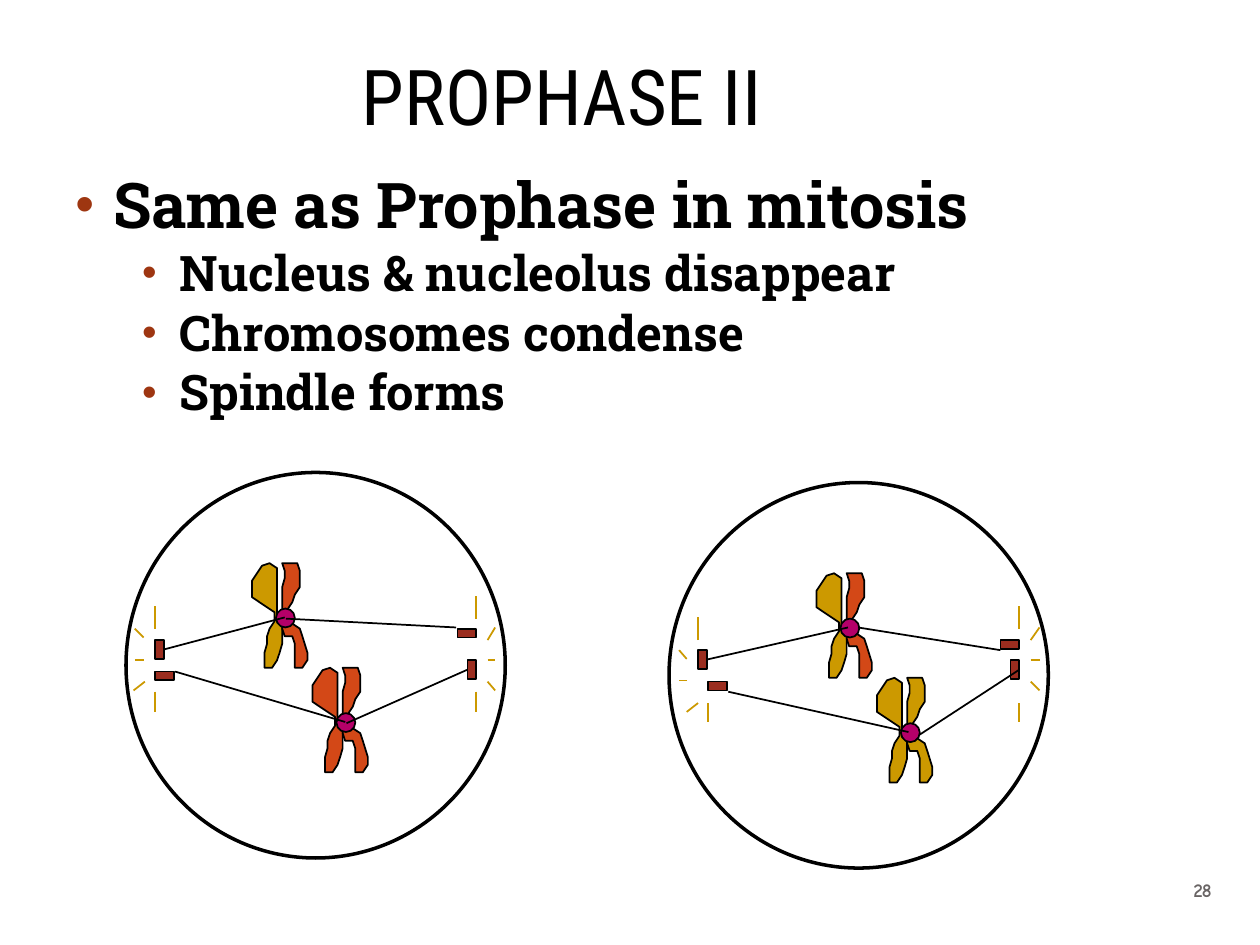
from lxml import etree
from pptx import Presentation
from pptx.dml.color import RGBColor
from pptx.enum import shapes, text
from pptx.oxml import ns
from pptx.util import Inches, Pt

COLORS = {"ink": "000000", "bullet": "9E3611", "number": "696464", "orange": "D34817",
          "gold": "CC9900", "centromere": "B50069", "rod": "9B2D1F"}
COLUMNS, ROWS = 1000, 750  # grid units of a hundredth of an inch
UNIT = Inches(10) // COLUMNS

# Chromosome outlines, in grid units from its top left corner
LEFT_CHROMATID = [
    (26, 44), (20, 42), (20, 4), (14, 0), (8, 2), (0, 14), (0, 27), (18, 39), (18, 46),
    (14, 52), (12, 58), (12, 64), (10, 71), (10, 83), (16, 83), (20, 77), (22, 71),
    (24, 64), (24, 46)]
RIGHT_CHROMATID = [
    (26, 44), (24, 37), (24, 19), (26, 12), (26, 6), (24, 0), (36, 0), (38, 6), (38, 19),
    (34, 25), (32, 31), (28, 37), (26, 44), (38, 52), (40, 58), (44, 71), (44, 77),
    (40, 83), (34, 83), (34, 64), (32, 58), (26, 58), (24, 52), (24, 46)]

# Cells: all parts are in grid units from the top left of the cell's box.
# A fibre ends at a point or at a (pole, connection site) of an upright rod.
CELLS = [
    {"box": (100, 375, 301, 306),
     "chromosomes": [(148, 155, "orange", "orange"), (100, 72, "gold", "orange")],
     "upright": {"left": (23, 133), "right": (271, 149)},
     "flat": [(23, 158), (263, 124)],
     "rays": [((15, 166), (6, 173)), ((7, 149), (14, 149)), ((7, 124), (14, 131)),
              ((23, 124), (23, 106)), ((23, 174), (23, 190)),
              ((278, 116), (278, 98)), ((287, 133), (293, 123)), ((287, 149), (293, 149)),
              ((287, 166), (293, 173)), ((278, 174), (278, 190))],
     "fibres": [(("left", 3), (126, 115)), ((127, 116), (262, 123)),
                ((39, 158), (174, 198)), ((175, 199), ("right", 1))]},
    {"box": (531, 383, 301, 306),
     "chromosomes": [(117, 72, "gold", "orange"), (165, 155, "gold", "gold")],
     "upright": {"left": (23, 133), "right": (271, 141)},
     "flat": [(31, 158), (263, 125)],
     "rays": [((23, 175), (14, 182)), ((8, 157), (14, 157)), ((8, 133), (14, 140)),
              ((23, 125), (23, 107)), ((31, 175), (31, 190)),
              ((278, 116), (278, 98)), ((287, 125), (294, 115)), ((287, 141), (294, 141)),
              ((287, 158), (294, 165)), ((278, 175), (278, 190))],
     "fibres": [(("left", 3), (142, 115)), ((263, 133), (150, 115)),
                ((47, 166), (190, 198)), ((199, 200), ("right", 3))]},
]


def rgb(name):
    return RGBColor.from_string(COLORS[name])


def grid(*units):
    return [unit * UNIT for unit in units]


def paint(shape, fill=None, width=1):
    shape.shadow.inherit = False
    if fill:
        shape.fill.solid()
        shape.fill.fore_color.rgb = rgb(fill)
    else:
        shape.fill.background()
    shape.line.color.rgb = rgb("ink")
    shape.line.width = Pt(width)


def add_preset(slide, kind, box, fill=None, width=1):
    shape = slide.shapes.add_shape(kind, *grid(*box))
    paint(shape, fill, width)
    return shape


def add_line(slide, start, end, color):
    line = slide.shapes.add_connector(shapes.MSO_CONNECTOR.STRAIGHT, *grid(*start, *end))
    line.line.color.rgb = rgb(color)
    line.line.width = Pt(1)
    etree.SubElement(line._element.spPr, ns.qn("a:effectLst"))
    return line


def add_text(slide, box, lines, anchor=text.MSO_ANCHOR.TOP):
    frame = slide.shapes.add_textbox(*grid(*box)).text_frame
    frame.word_wrap = True
    frame.vertical_anchor = anchor
    frame.text = "\n".join(lines)
    return frame


def style(paragraph, font, size, color="ink", bold=False):
    for run in paragraph.runs:
        run.font.name, run.font.size, run.font.bold = font, Pt(size), bold
        run.font.color.rgb = rgb(color)


def add_bullet(paragraph, margin):
    props = paragraph._p.get_or_add_pPr()
    props.set("marL", str(Inches(margin)))
    props.set("indent", str(Inches(-0.3)))
    color = etree.SubElement(props, ns.qn("a:buClr"))
    etree.SubElement(color, ns.qn("a:srgbClr"), val=COLORS["bullet"])
    etree.SubElement(props, ns.qn("a:buSzPct"), val="85000")
    etree.SubElement(props, ns.qn("a:buFont"), typeface="Arial")
    etree.SubElement(props, ns.qn("a:buChar"), char="•")


def add_title(slide, box):
    title = add_text(slide, box, ["PROPHASE II"], text.MSO_ANCHOR.MIDDLE).paragraphs[0]
    title.alignment = text.PP_ALIGN.CENTER
    title.line_spacing = 0.9
    style(title, "Roboto Condensed", 44)


def add_points(slide, box):
    frame = add_text(slide, box, ["Same as Prophase in mitosis", "Nucleus & nucleolus disappear",
                                  "Chromosomes condense", "Spindle forms"])
    for index, point in enumerate(frame.paragraphs):
        point.level = 1 if index else 0
        add_bullet(point, 0.83 if index else 0.3)
        point.line_spacing = 0.9
        point.space_before = Pt(4 if index else 0)
        style(point, "Roboto Slab", 28 if index else 36, bold=True)


def add_slide_number(slide, box):
    number = add_text(slide, box, ["28"], text.MSO_ANCHOR.MIDDLE).paragraphs[0]
    number.alignment = text.PP_ALIGN.CENTER
    style(number, "Comic Neue", 11, "number", bold=True)
    number.runs[0].font._element.set("spc", "-70")


def add_chromosome(slide, left, top, left_fill, right_fill):
    for outline, fill in ((LEFT_CHROMATID, left_fill), (RIGHT_CHROMATID, right_fill)):
        points = [(left + x, top + y) for x, y in outline]
        builder = slide.shapes.build_freeform(*points[0], scale=UNIT)
        builder.add_line_segments(points[1:], close=True)
        paint(builder.convert_to_shape(), fill)
    add_preset(slide, shapes.MSO_SHAPE.OVAL, (left + 19, top + 36, 15, 15), "centromere")


def add_cell(slide, cell):
    left, top, width, height = cell["box"]

    def place(point):
        return left + point[0], top + point[1]

    # Chromosomes and membrane
    for x, y, *fills in cell["chromosomes"]:
        add_chromosome(slide, *place((x, y)), *fills)
    add_preset(slide, shapes.MSO_SHAPE.OVAL, (left, top, width, height), width=2)

    # Centrioles with their asters
    rod_kind = shapes.MSO_SHAPE.RECTANGLE
    uprights = {pole: add_preset(slide, rod_kind, (*place(spot), 7, 15), "rod")
                for pole, spot in cell["upright"].items()}
    for spot in cell["flat"]:
        add_preset(slide, rod_kind, (*place(spot), 15, 7), "rod")
    for start, end in cell["rays"]:
        add_line(slide, place(start), place(end), "gold")

    # Spindle fibres
    for ends in cell["fibres"]:
        points = [place(cell["upright"].get(end[0], end)) for end in ends]
        fibre = add_line(slide, *points, "ink")
        for end, connect in zip(ends, (fibre.begin_connect, fibre.end_connect)):
            if end[0] in uprights:
                connect(uprights[end[0]], end[1])


def main():
    deck = Presentation()
    deck.slide_width, deck.slide_height = grid(COLUMNS, ROWS)
    slide = deck.slides.add_slide(deck.slide_layouts[6])
    add_title(slide, (50, 35, 792, 90))
    add_points(slide, (50, 133, 792, 573))
    add_slide_number(slide, (928, 686, 53, 40))
    for cell in CELLS:
        add_cell(slide, cell)
    deck.save("out.pptx")


if __name__ == "__main__":
    main()
